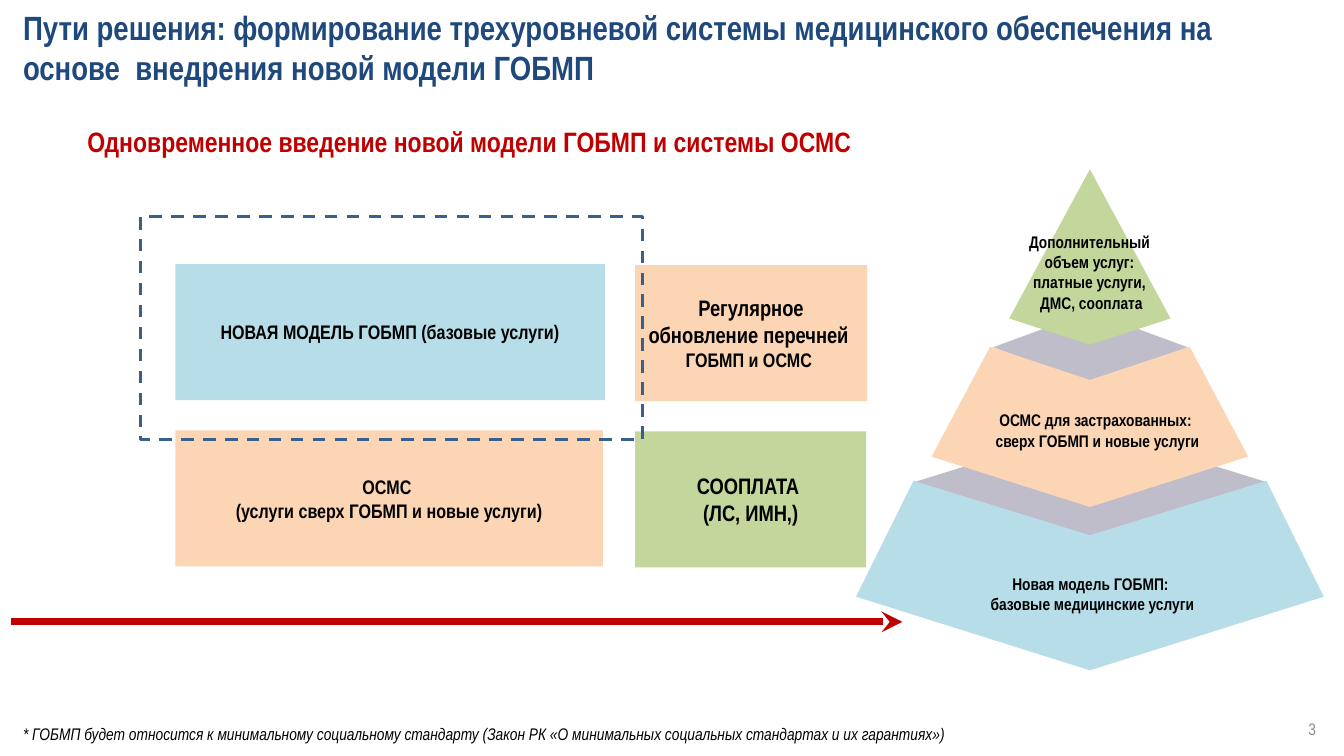
from lxml import etree
from pptx import Presentation
from pptx.dml.color import RGBColor
from pptx.enum.dml import MSO_LINE
from pptx.enum.shapes import MSO_CONNECTOR, MSO_SHAPE
from pptx.enum.text import MSO_ANCHOR, PP_ALIGN
from pptx.oxml.ns import qn
from pptx.util import Inches, Pt

LEFT, CENTER, RIGHT = PP_ALIGN.LEFT, PP_ALIGN.CENTER, PP_ALIGN.RIGHT
TOP, MIDDLE = MSO_ANCHOR.TOP, MSO_ANCHOR.MIDDLE
RECTANGLE, DIAMOND = MSO_SHAPE.RECTANGLE, MSO_SHAPE.FLOWCHART_DECISION
STRAIGHT, DASH = MSO_CONNECTOR.STRAIGHT, MSO_LINE.DASH

FONT = "Arial Narrow"
BLACK = RGBColor(0x00, 0x00, 0x00)
NAVY = RGBColor(0x1F, 0x49, 0x7D)
FRAME_BLUE = RGBColor(0x3A, 0x5F, 0x8C)
RED = RGBColor(0xC0, 0x00, 0x00)
GRAY = RGBColor(0x8C, 0x8C, 0x8C)
SHADE = RGBColor(0xBF, 0xBD, 0xC9)
BLUE = RGBColor(0xB7, 0xDE, 0xE8)
ORANGE = RGBColor(0xFC, 0xD5, 0xB5)
GREEN = RGBColor(0xC3, 0xD6, 0x9B)

deck = Presentation()
deck.slide_width, deck.slide_height = Inches(13.33), Inches(7.5)
page = deck.slides.add_slide(deck.slide_layouts[6])
shapes = page.shapes


def write(box, lines, sizes, color=BLACK, bold=True, italic=False,
          align=CENTER, anchor=MIDDLE, wrap=True):
    """Fill a shape with one paragraph per line; sizes holds one size per line."""
    frame = box.text_frame
    frame.word_wrap = wrap
    frame.vertical_anchor = anchor
    for index, (line, size) in enumerate(zip(lines, sizes)):
        para = frame.paragraphs[0] if index == 0 else frame.add_paragraph()
        para.alignment = align
        span = para.add_run()
        span.text = line
        span.font.name, span.font.size = FONT, Pt(size)
        span.font.bold, span.font.italic = bold, italic
        span.font.color.rgb = color


def paint(shape, color):
    shape.shadow.inherit = False
    shape.fill.solid()
    shape.fill.fore_color.rgb = color
    shape.line.fill.background()


# Title, page number and footnote
title = shapes.add_textbox(Inches(0.13), Inches(0.16), Inches(12.99), Inches(0.62))
write(title, ["Пути решения: формирование трехуровневой системы медицинского "
              "обеспечения на основе  внедрения новой модели ГОБМП"],
      [24], color=NAVY, align=LEFT)
number = shapes.add_textbox(Inches(10.04), Inches(7.03), Inches(3.11), Inches(0.4))
write(number, ["3"], [12], color=GRAY, bold=False, align=RIGHT)
footnote = shapes.add_textbox(Inches(0.13), Inches(7.13), Inches(9.52), Inches(0.3))
write(footnote, ["* ГОБМП будет относится к минимальному социальному стандарту "
                 "(Закон РК «О минимальных социальных стандартах и их гарантиях»)"],
      [12], bold=False, italic=True, align=LEFT, anchor=TOP, wrap=False)

# Pyramid: shaded gaps, then each tier as two halves mirrored about the axis
AXIS = 10.81
for left, top, width, height in [(9.85, 3.09, 1.93, 0.71), (9.06, 4.24, 3.51, 1.09)]:
    gap = shapes.add_shape(DIAMOND, Inches(left), Inches(top), Inches(width), Inches(height))
    paint(gap, SHADE)

tiers = [  # colour, outline as (distance from axis, height on page)
    (BLUE, [(2.32, 5.92), (1.75, 4.77), (0, 5.31), (0, 6.65)]),
    (ORANGE, [(1.57, 4.53), (0.99, 3.44), (0, 3.77), (0, 5.03)]),
    (GREEN, [(0, 3.42), (0, 1.68), (0.8, 3.16)]),
]
for color, outline in tiers:
    for side in (1, -1):
        points = [(Inches(AXIS + side * x), Inches(y)) for x, y in outline]
        builder = shapes.build_freeform(*points[0])
        builder.add_line_segments(points[1:], close=True)
        paint(builder.convert_to_shape(), color)

tier_labels = [
    (8.63, 2.25, 4.39, 0.91, ["Дополнительный ", "объем услуг: ", "платные услуги, ",
                              "ДМС, сооплата"]),
    (9.04, 4.02, 3.69, 0.5, ["ОСМС для застрахованных: ", "сверх ГОБМП и новые услуги"]),
    (8.95, 5.64, 3.77, 0.5, ["Новая модель ГОБМП: ", "базовые медицинские услуги"]),
]
for left, top, width, height, lines in tier_labels:
    label = shapes.add_textbox(Inches(left), Inches(top), Inches(width), Inches(height))
    write(label, lines, [12] * len(lines), anchor=TOP)

# Timeline arrow
arrow = shapes.add_connector(STRAIGHT, Inches(0.11), Inches(6.17), Inches(8.95), Inches(6.17))
arrow.line.color.rgb = RED
arrow.line.width = Pt(5)
etree.SubElement(arrow.line._get_or_add_ln(), qn("a:tailEnd"), type="stealth")
etree.SubElement(arrow._element.spPr, qn("a:effectLst"))

# Blocks of the model
blocks = [
    (1.74, 4.27, 4.24, ORANGE, ["ОСМС ", "(услуги сверх ГОБМП и новые услуги)"], [14, 14]),
    (6.3, 2.63, 2.3, ORANGE, ["Регулярное обновление перечней ", "ГОБМП и ОСМС "], [16, 14]),
    (1.74, 2.62, 4.26, BLUE, ["НОВАЯ МОДЕЛЬ ГОБМП (базовые услуги)"], [14]),
    (6.3, 4.28, 2.29, GREEN, ["СООПЛАТА ", "(ЛС, ИМН,)"], [16, 16]),
]
for left, top, width, color, lines, sizes in blocks:
    block = shapes.add_shape(RECTANGLE, Inches(left), Inches(top), Inches(width), Inches(1.35))
    paint(block, color)
    write(block, lines, sizes)

heading = shapes.add_textbox(Inches(0.53), Inches(1.19), Inches(8.25), Inches(0.44))
write(heading, ["Одновременное введение новой модели ГОБМП и системы ОСМС"], [20],
      color=RED, anchor=TOP)

# Dashed frame around the new model
frame_box = shapes.add_shape(RECTANGLE, Inches(1.39), Inches(2.15), Inches(4.98), Inches(2.21))
frame_box.shadow.inherit = False
frame_box.fill.background()
frame_box.line.color.rgb = FRAME_BLUE
frame_box.line.width = Pt(2.25)
frame_box.line.dash_style = DASH

deck.save("out.pptx")
